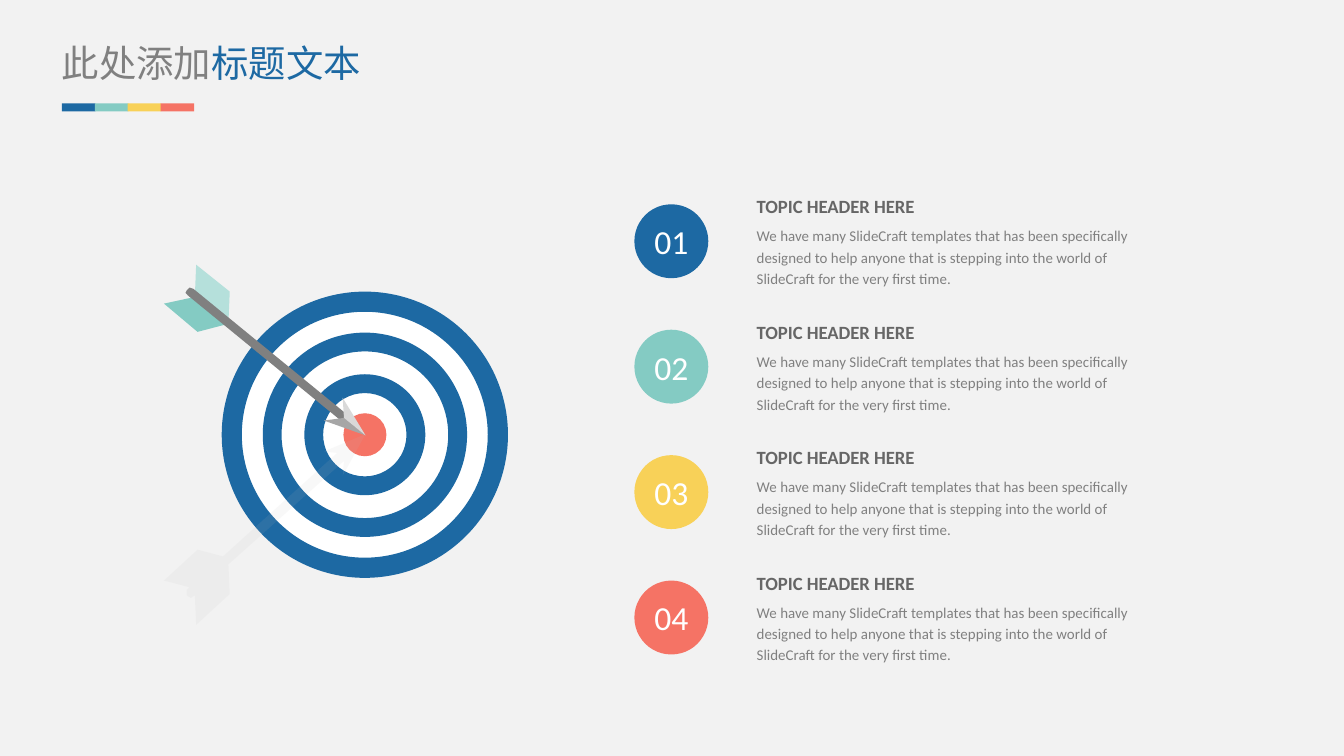
from lxml.etree import SubElement
from pptx import Presentation
from pptx.dml.color import RGBColor
from pptx.enum.shapes import MSO_SHAPE as Shape
from pptx.enum.text import MSO_ANCHOR as Anchor, MSO_AUTO_SIZE as AutoSize, PP_ALIGN as Align
from pptx.oxml.ns import qn
from pptx.util import Inches, Pt

BLUE, TEAL, YELLOW, CORAL = PALETTE = ("1D69A3", "84CBC3", "F8D158", "F57365")
WHITE, GRAY, DARK_GRAY = "FFFFFF", "808080", "666666"
LATIN, CJK = "Calibri", "Noto Sans CJK SC"

HEADER = "TOPIC HEADER HERE"
DETAIL = ("We have many SlideCraft templates that has been specifically designed to help "
          "anyone that is stepping into the world of SlideCraft for the very first time.")

FLETCHING_LOW = [(1.7, 2.41), (1.47, 2.47), (1.22, 2.26), (1.45, 2.21)]
FLETCHING_HIGH = [(1.7, 2.41), (1.71, 2.17), (1.46, 1.97), (1.45, 2.21)]
SHAFT = [(2.63, 3.2), (2.61, 3.19), (1.4, 2.2), (1.38, 2.18), (1.39, 2.16), (1.41, 2.14),
         (1.44, 2.15), (2.65, 3.14), (2.66, 3.16), (2.66, 3.18)]
TIP_LOW = [(2.41, 3.13), (2.72, 3.24), (2.56, 3.11)]
TIP_HIGH = [(2.56, 3.11), (2.72, 3.24), (2.55, 2.96)]
ARROW_SHADOW = [(2.72, 3.23), (2.55, 3.54), (2.56, 3.43), (1.7, 4.2), (1.71, 4.42),
                (1.46, 4.65), (1.45, 4.43), (1.42, 4.45), (1.39, 4.43), (1.39, 4.39),
                (1.41, 4.37), (1.22, 4.32), (1.47, 4.09), (1.66, 4.14), (2.51, 3.37),
                (2.41, 3.36)]


def color(hex_code):
    return RGBColor.from_string(hex_code)


def write(paragraph, text, size, fill, font=LATIN, bold=False, align=None,
          line_spacing=None, space_before=None):
    """Append one formatted run and set the paragraph format that is given."""
    run = paragraph.add_run()
    run.text = text
    run.font.size, run.font.bold, run.font.name = Pt(size), bold, font
    run.font.color.rgb = color(fill)
    SubElement(run.font._element, qn("a:ea")).set("typeface", font)
    if align is not None:
        paragraph.alignment = align
    if line_spacing is not None:
        paragraph.line_spacing = line_spacing
    if space_before is not None:
        paragraph.space_before = Pt(space_before)


class Painter:
    def __init__(self, slide):
        self.slide = slide
        self.shapes = slide.shapes

    def start_group(self):
        self.shapes = self.slide.shapes.add_group_shape().shapes

    def end_group(self):
        self.shapes = self.slide.shapes

    def finish(self, shape, fill, alpha=None):
        shape.shadow.inherit = False
        shape.fill.solid()
        shape.fill.fore_color.rgb = color(fill)
        shape.line.fill.background()
        if alpha is not None:
            rgb = shape.fill._xPr.find(qn("a:solidFill")).find(qn("a:srgbClr"))
            SubElement(rgb, qn("a:alpha")).set("val", str(alpha * 1000))
        return shape

    def preset(self, kind, left, top, width, height, fill):
        box = map(Inches, (left, top, width, height))
        return self.finish(self.shapes.add_shape(kind, *box), fill)

    def centered(self, kind, center, size, fill):
        x, y = center
        return self.preset(kind, x - size / 2, y - size / 2, size, size, fill)

    def ring(self, center, size, thickness, fill):
        donut = self.centered(Shape.DONUT, center, size, fill)
        donut.adjustments[0] = thickness / size

    def polygon(self, points, fill, alpha=None):
        start, *rest = [(Inches(x), Inches(y)) for x, y in points]
        outline = self.shapes.build_freeform(*start)
        outline.add_line_segments(rest, close=True)
        self.finish(outline.convert_to_shape(), fill, alpha)

    def zero_margins(self, frame):
        frame.margin_left = frame.margin_right = frame.margin_top = frame.margin_bottom = 0
        frame.word_wrap = True

    def text_box(self, left, top, width, height):
        box = map(Inches, (left, top, width, height))
        frame = self.shapes.add_textbox(*box).text_frame
        self.zero_margins(frame)
        frame.auto_size = AutoSize.SHAPE_TO_FIT_TEXT
        return frame

    def badge(self, left, top, size, label, fill):
        frame = self.preset(Shape.OVAL, left, top, size, size, fill).text_frame
        self.zero_margins(frame)
        frame.vertical_anchor = Anchor.MIDDLE
        write(frame.paragraphs[0], label, 18, WHITE, align=Align.CENTER)


def main():
    deck = Presentation()
    # Widescreen, 16:9
    deck.slide_width, deck.slide_height = Inches(10), Inches(10 * 9 / 16)
    slide = deck.slides.add_slide(deck.slide_layouts[6])
    slide.background.fill.solid()
    slide.background.fill.fore_color.rgb = color("F2F2F2")
    painter = Painter(slide)

    # Target
    bullseye = (2.715, 3.235)
    painter.start_group()
    painter.centered(Shape.OVAL, bullseye, 2.11, WHITE)
    painter.centered(Shape.OVAL, bullseye, 0.32, CORAL)
    for size, thickness in ((2.13, 0.15), (1.52, 0.14), (0.9, 0.14)):
        painter.ring(bullseye, size, thickness, BLUE)

    # Arrow and its shadow
    painter.start_group()
    for points, fill in ((FLETCHING_LOW, TEAL), (FLETCHING_HIGH, "B5E0DB"), (SHAFT, GRAY),
                         (TIP_LOW, "A6A6A6"), (TIP_HIGH, "D9D9D9")):
        painter.polygon(points, fill)
    painter.end_group()
    painter.polygon(ARROW_SHADOW, "BFBFBF", alpha=10)

    # Numbered topics
    for index, accent in enumerate(PALETTE):
        top = 1.42 + index * 2.8 / 3
        topic = painter.text_box(5.63, top, 2.91, 0.73)
        spacing = dict(line_spacing=1.2, space_before=3)
        write(topic.paragraphs[0], HEADER, 10, DARK_GRAY, bold=True, **spacing)
        write(topic.add_paragraph(), DETAIL, 8, GRAY, **spacing)
        painter.badge(4.72, top + 0.1, 0.55, f"{index + 1:02}", accent)

    # Title and colour bar
    title = painter.text_box(0.46, 0.3, 3.04, 0.34).paragraphs[0]
    write(title, "此处添加", 20, GRAY, font=CJK)
    write(title, "标题文本", 20, BLUE, font=CJK)
    painter.start_group()
    for index, accent in enumerate(PALETTE):
        painter.preset(Shape.RECTANGLE, 0.46 + index * 0.245, 0.77, 0.25, 0.06, accent)

    deck.save("out.pptx")


if __name__ == "__main__":
    main()
